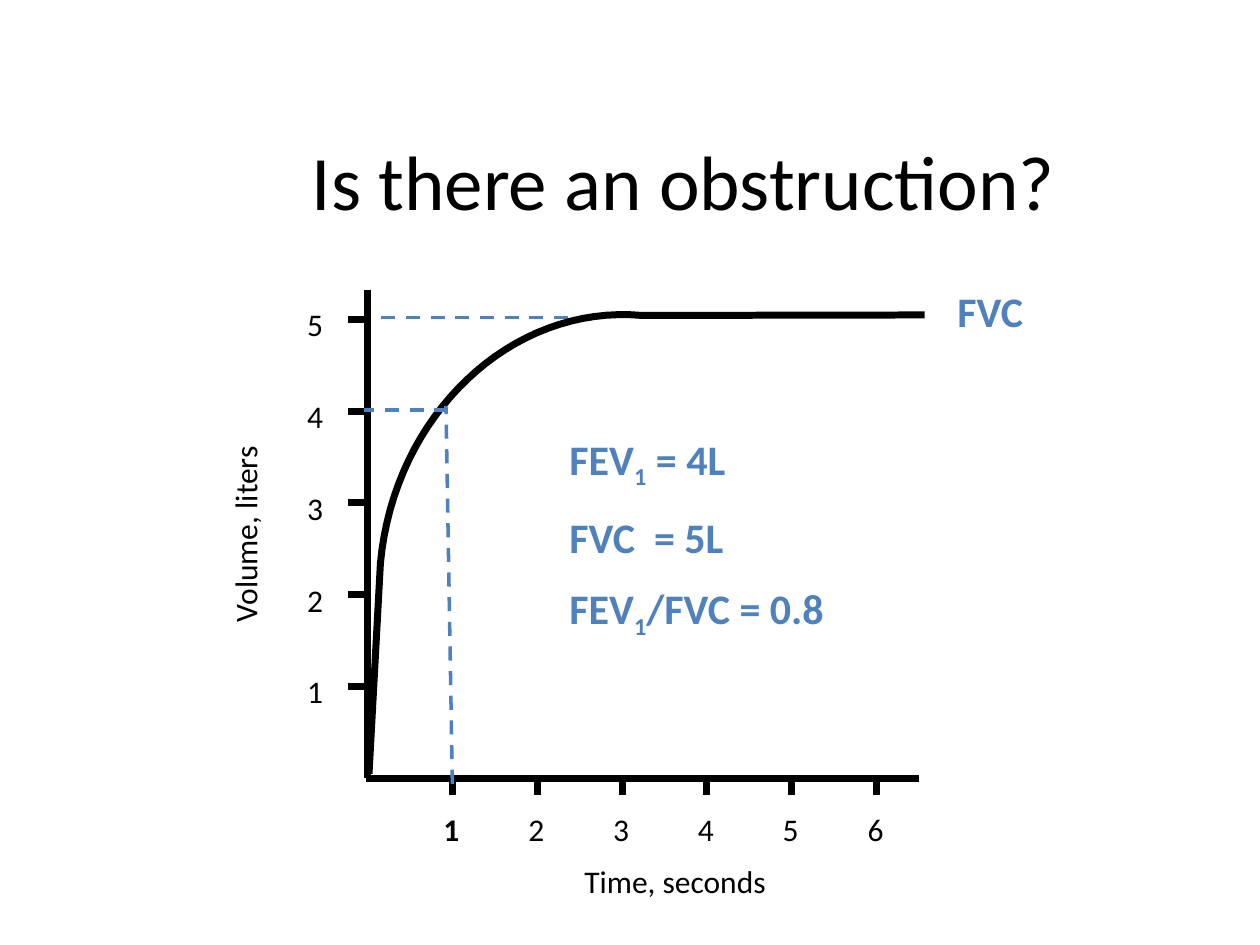
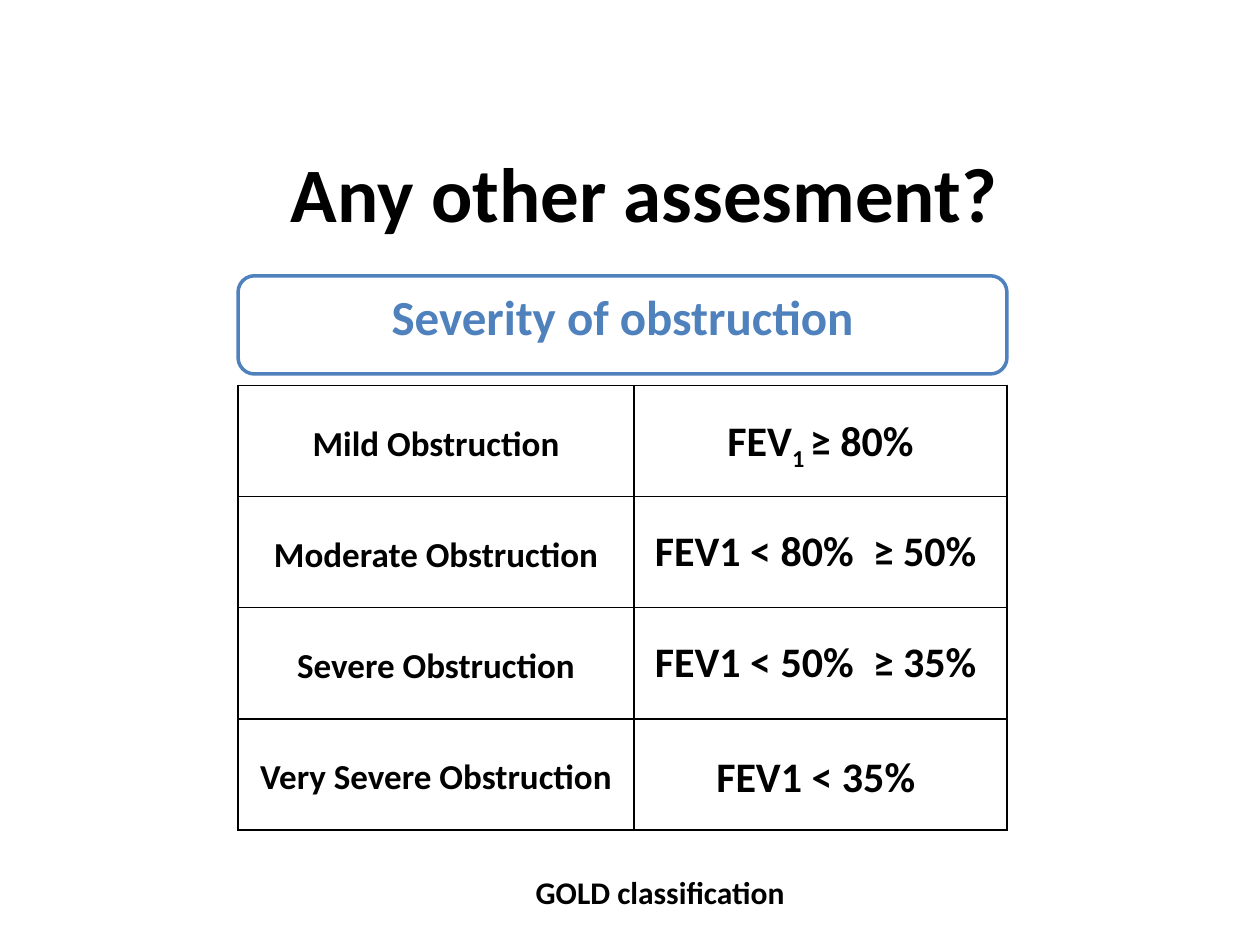
import pptx
import pptx.dml.color
import pptx.enum.shapes
import pptx.enum.dml
import pptx.enum.text
import pptx.oxml
import pptx.oxml.ns
import pptx.util

Cm, Pt = pptx.util.Cm, pptx.util.Pt
ALIGN = pptx.enum.text.PP_ALIGN
ANCHOR = pptx.enum.text.MSO_ANCHOR

# Shared look
FONT = "Calibri"
COLORS = {"ink": "000000", "accent": "4F81BD", "paper": "FFFFFF"}

# Content: a run is (text, is_subscript)
CURVE_TITLE = "Is there an obstruction?"
TIMES = range(1, 7)
VOLUMES = range(1, 6)
RESULTS = [
    [("FEV", False), ("1", True), (" = 4L", False)],
    [("FVC  = 5L", False)],
    [("FEV", False), ("1", True), ("/FVC = 0.8", False)],
]
SEVERITY_TITLE = "Any other assesment?"
SEVERITY_HEADING = "Severity of obstruction"
SEVERITY_SOURCE = "GOLD classification"
# (grade, criterion, line spacing and space before of the criterion)
GRADES = [
    ("Mild Obstruction", [("FEV", False), ("1 ", True), ("≥ 80%", False)], 1.15),
    ("Moderate Obstruction", [("FEV1 < 80%  ≥ 50% ", False)], 1.0),
    ("Severe Obstruction", [("FEV1 < 50%  ≥ 35% ", False)], 1.0),
    ("Very Severe Obstruction", [("FEV1 < 35% ", False)], 1.15),
]

# Spirogram geometry in cm
AXIS_X, AXIS_Y = 7.41, 15.69
SECOND, LITER = 1.71, 1.85
BEND = [(7.67, 11.35), (7.95, 8.36), (10.31, 6.12), (12.95, 6.36)]
PLATEAU_END = (18.64, 6.35)
BEND_STEPS = 32


def rgb(name):
    return pptx.dml.color.RGBColor.from_string(COLORS[name])


def write(paragraph, runs, size, color="ink", bold=False, align=ALIGN.LEFT):
    paragraph.alignment = align
    for text, is_subscript in runs:
        run = paragraph.add_run()
        run.text = text
        run.font.name, run.font.size, run.font.bold = FONT, Pt(size), bold
        run.font.color.rgb = rgb(color)
        if is_subscript:
            run._r.get_or_add_rPr().set("baseline", "-25000")


def add_title(slide, text, box, bold=False):
    title = slide.shapes.title
    title.left, title.top, title.width, title.height = map(Cm, box)
    title.text_frame.vertical_anchor = ANCHOR.MIDDLE
    write(title.text_frame.paragraphs[0], [(text, False)], 44, bold=bold, align=ALIGN.CENTER)


def add_label(slide, lines, box, size=18, **look):
    label = slide.shapes.add_textbox(*map(Cm, box))
    frame = label.text_frame
    frame.word_wrap = True
    for i, runs in enumerate(lines):
        paragraph = frame.paragraphs[0] if i == 0 else frame.add_paragraph()
        if i:
            paragraph.space_before = Pt(size / 2)
        write(paragraph, runs, size, **look)
    return label


def add_line(slide, x1, y1, x2, y2, guide=False):
    line = slide.shapes.add_connector(
        pptx.enum.shapes.MSO_CONNECTOR.STRAIGHT, Cm(x1), Cm(y1), Cm(x2), Cm(y2))
    line.line.color.rgb = rgb("accent" if guide else "ink")
    line.line.width = Pt(2 if guide else 4)
    if guide:
        line.line.dash_style = pptx.enum.dml.MSO_LINE.DASH
    line._element.spPr.append(pptx.oxml.parse_xml(
        "<a:effectLst %s/>" % pptx.oxml.ns.nsdecls("a")))


def bend_point(t):
    weights = ((1 - t) ** 3, 3 * t * (1 - t) ** 2, 3 * t * t * (1 - t), t ** 3)
    return tuple(sum(w * p[axis] for w, p in zip(weights, BEND)) for axis in (0, 1))


def add_volume_curve(slide):
    points = [bend_point(i / BEND_STEPS) for i in range(BEND_STEPS + 1)] + [PLATEAU_END]
    outline = slide.shapes.build_freeform(Cm(7.44), Cm(15.6))
    outline.add_line_segments([(Cm(x), Cm(y)) for x, y in points], close=False)
    curve = outline.convert_to_shape()
    curve.shadow.inherit = False
    curve.fill.background()
    curve.line.color.rgb = rgb("ink")
    curve.line.width = Pt(4)


def build_spirogram(slide):
    add_title(slide, CURVE_TITLE, (5.18, 2.03, 17.2, 3.18))
    add_line(slide, 7.19, 6.4, 11.63, 6.4, guide=True)

    # Axes, ticks and numbers
    add_line(slide, 7.37, AXIS_Y, 18.52, AXIS_Y)
    add_line(slide, AXIS_X, AXIS_Y, AXIS_X, 5.84)
    for second in TIMES:
        x = AXIS_X + second * SECOND
        add_line(slide, x, 15.65, x, 16.03)
        add_label(slide, [[(str(second), False)]], (x - 0.43, 16.2, 0.9, 1.02),
                  bold=second == 1)
    for liter in VOLUMES:
        y = AXIS_Y - liter * LITER
        add_line(slide, 7.37, y, 7.01, y)
        add_label(slide, [[(str(liter), False)]], (5.94, y - 0.41, 0.9, 1.02))
    volume_name = add_label(slide, [[("Volume, liters", False)]], (2.44, 9.5, 5.28, 1.3))
    volume_name.rotation = 270
    add_label(slide, [[("Time, seconds", False)]], (11.53, 17.25, 5.64, 1.3))

    # Curve with the one-second guides
    add_volume_curve(slide)
    add_line(slide, 9.12, 15.8, 8.99, 8.18, guide=True)
    add_line(slide, 9.04, 8.26, 7.34, 8.26, guide=True)

    # Readings
    add_label(slide, [[("FVC", False)]], (19.05, 5.64, 2.1, 1.3), 24,
              color="accent", bold=True)
    add_label(slide, RESULTS, (11.23, 8.61, 8.69, 4.37), 24, color="accent", bold=True)


def border_cell(cell):
    properties = cell._tc.get_or_add_tcPr()
    for i, side in enumerate("LRTB"):
        properties.insert(i, pptx.oxml.parse_xml(
            '<a:ln%s %s w="12700"><a:solidFill><a:srgbClr val="%s"/></a:solidFill></a:ln%s>'
            % (side, pptx.oxml.ns.nsdecls("a"), COLORS["ink"], side)))


def fill_cell(cell, runs, size, spacing):
    cell.fill.background()
    border_cell(cell)
    cell.vertical_anchor = ANCHOR.MIDDLE
    cell.margin_left = cell.margin_right = Cm(0.18)
    cell.margin_top = cell.margin_bottom = 0
    paragraph = cell.text_frame.paragraphs[0]
    paragraph.line_spacing = spacing
    write(paragraph, runs, size, bold=True, align=ALIGN.CENTER)


def build_severity(slide):
    # Grades and criteria
    grades = slide.shapes.add_table(
        len(GRADES), 2, Cm(4.8), Cm(7.77), Cm(15.5), Cm(8.96)).table
    grades.first_row = grades.horz_banding = False
    grades.columns[0].width, grades.columns[1].width = Cm(7.98), Cm(7.52)
    for row, (grade, criterion, spacing) in enumerate(GRADES):
        grades.rows[row].height = Cm(2.24)
        fill_cell(grades.cell(row, 0), [(grade, False)], 20, 1.15)
        fill_cell(grades.cell(row, 1), criterion, 24, spacing)

    add_title(slide, SEVERITY_TITLE, (2.9, 2.41, 20.19, 2.92), bold=True)
    add_label(slide, [[(SEVERITY_SOURCE, False)]], (10.11, 17.48, 6.4, 1.02),
              bold=True, align=ALIGN.CENTER)

    # Heading above the table
    heading = slide.shapes.add_shape(
        pptx.enum.shapes.MSO_SHAPE.ROUNDED_RECTANGLE, Cm(4.8), Cm(5.56), Cm(15.5), Cm(1.98))
    heading.shadow.inherit = False
    heading.fill.solid()
    heading.fill.fore_color.rgb = rgb("paper")
    heading.line.color.rgb = rgb("accent")
    heading.line.width = Pt(2)
    heading.text_frame.vertical_anchor = ANCHOR.TOP
    write(heading.text_frame.paragraphs[0], [(SEVERITY_HEADING, False)], 28,
          "accent", True, ALIGN.CENTER)


def main():
    deck = pptx.Presentation()
    deck.slide_width, deck.slide_height = Cm(25.4), Cm(19.05)
    title_only = deck.slide_layouts[5]
    for build in (build_spirogram, build_severity):
        build(deck.slides.add_slide(title_only))
    deck.save("out.pptx")


if __name__ == "__main__":
    main()
